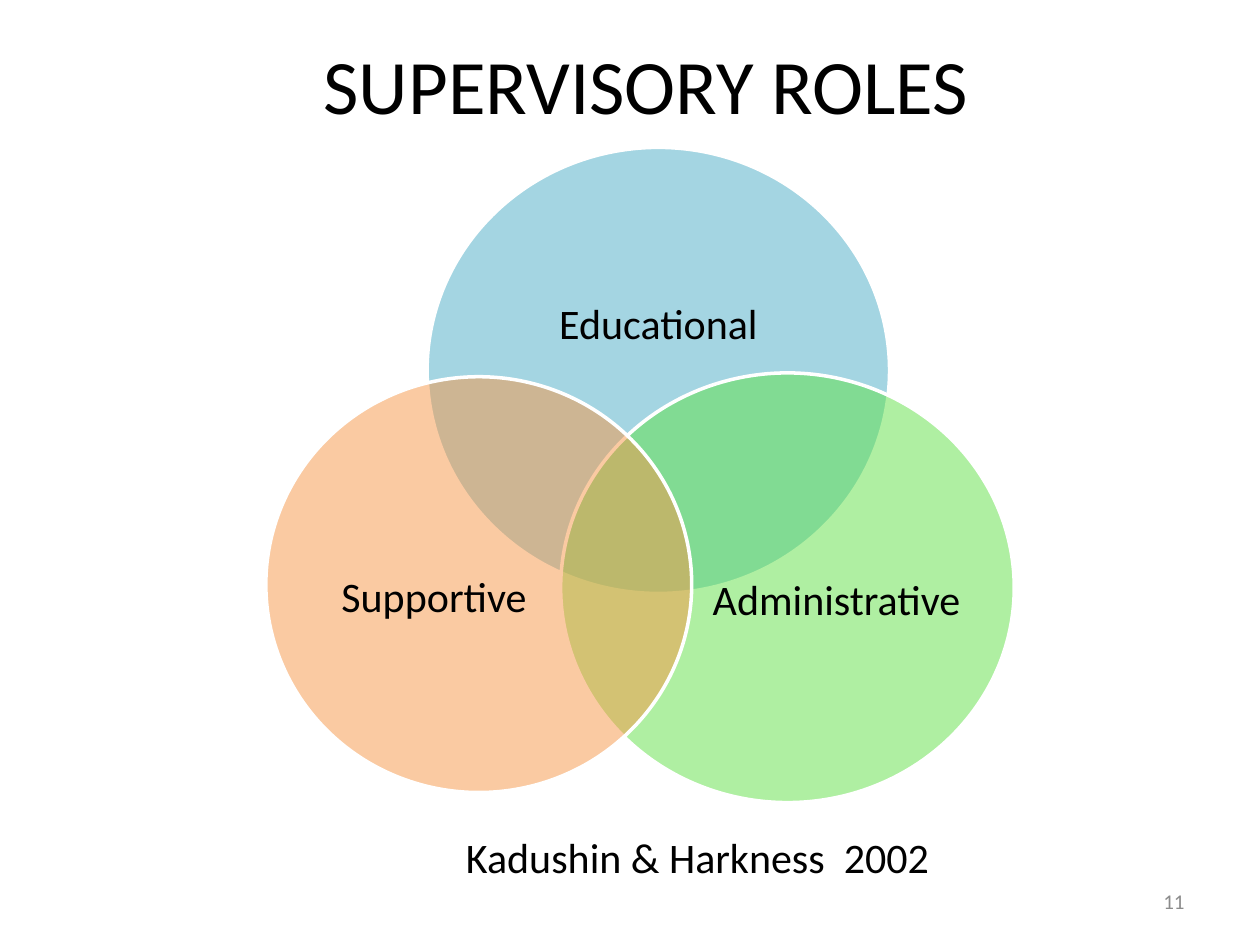
from lxml.etree import SubElement
from pptx import Presentation
from pptx.dml.color import RGBColor
from pptx.enum.shapes import MSO_SHAPE
from pptx.enum.text import MSO_ANCHOR, PP_ALIGN
from pptx.oxml.ns import qn
from pptx.util import Inches, Pt

FONT = "Calibri"
BLACK, GREY, WHITE = "000000", "8C8C8C", "FFFFFF"

# Circle and label boxes (left, top, width, height) relative to the diagram, back to front
ROLES = [
    ("Educational", "4BACC6", (1.28, 0, 3.67, 3.54), (1.77, 0.62, 2.69, 1.59)),
    ("Administrative", "60E146", (2.34, 1.79, 3.6, 3.41), (3.45, 2.67, 2.16, 1.87)),
    ("Supportive", "F79646", (0, 1.82, 3.38, 3.3), (0.32, 2.67, 2.03, 1.82)),
]


def color(hex_code):
    return RGBColor.from_string(hex_code)


def add_text(slide, text, box, size=24, hex_code=BLACK, align=PP_ALIGN.LEFT,
             anchor=MSO_ANCHOR.TOP, wrap=True, margin=None, line_spacing=None):
    shape = slide.shapes.add_textbox(*map(Inches, box))
    frame = shape.text_frame
    frame.word_wrap = wrap
    frame.vertical_anchor = anchor
    if margin is not None:
        frame.margin_left = frame.margin_right = Inches(margin)
        frame.margin_top = frame.margin_bottom = Inches(margin)
    paragraph = frame.paragraphs[0]
    paragraph.alignment = align
    paragraph.line_spacing = line_spacing
    run = paragraph.add_run()
    run.text = text
    run.font.name = FONT
    run.font.size = Pt(size)
    run.font.color.rgb = color(hex_code)


def add_circle(slide, box, hex_code, opacity=50):
    shape = slide.shapes.add_shape(MSO_SHAPE.OVAL, *map(Inches, box))
    shape.shadow.inherit = False
    shape.fill.solid()
    shape.fill.fore_color.rgb = color(hex_code)
    fill_color = shape.fill._xPr.find(qn("a:solidFill"))[0]
    SubElement(fill_color, qn("a:alpha"), val=str(opacity * 1000))
    shape.line.color.rgb = color(WHITE)
    shape.line.width = Pt(2)


def add_venn(slide, left, top):
    def place(box):
        return (left + box[0], top + box[1], box[2], box[3])

    for name, hex_code, circle_box, label_box in ROLES:
        add_circle(slide, place(circle_box), hex_code)
        add_text(slide, name, place(label_box), align=PP_ALIGN.CENTER,
                 anchor=MSO_ANCHOR.MIDDLE, margin=0, line_spacing=0.9)


def build_roles_slide(presentation):
    slide = presentation.slides.add_slide(presentation.slide_layouts[6])
    # Source citation
    add_text(slide, "Kadushin & Harkness  2002", (3.6, 6.55, 4.4, 0.5))
    # Overlapping roles
    add_venn(slide, 2.11, 1.17)
    # Title
    add_text(slide, "SUPERVISORY ROLES", (2.47, 0.25, 5.51, 0.84), size=44, wrap=False)
    # Slide number
    add_text(slide, "11", (7.17, 6.95, 2.33, 0.4), size=12, hex_code=GREY,
             align=PP_ALIGN.RIGHT, anchor=MSO_ANCHOR.MIDDLE)


def main():
    presentation = Presentation()
    presentation.slide_width = Inches(10)
    presentation.slide_height = Inches(7.5)
    build_roles_slide(presentation)
    presentation.save("out.pptx")


if __name__ == "__main__":
    main()
